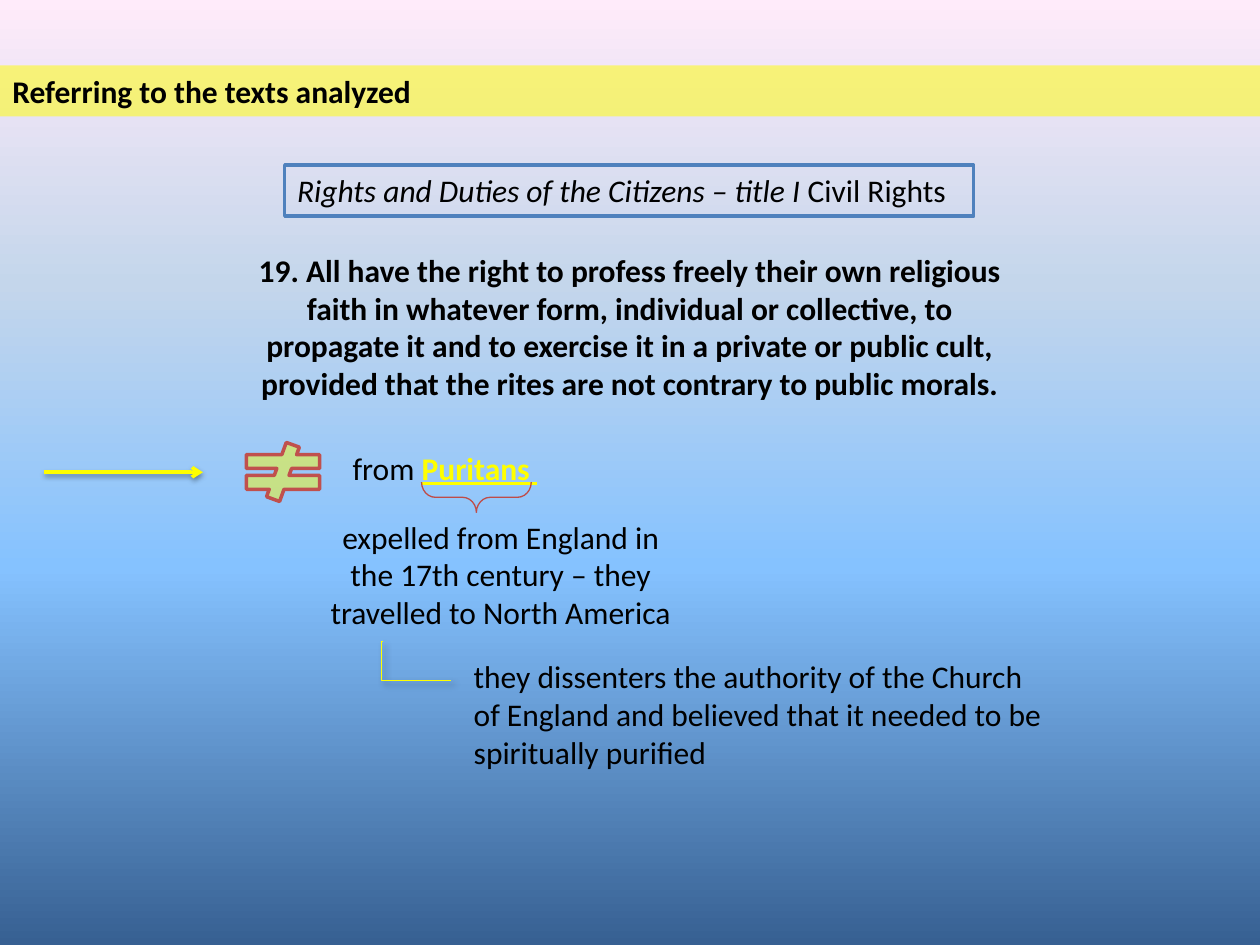
import pptx
import pptx.dml.color
import pptx.enum.shapes
import pptx.enum.text
import pptx.oxml
import pptx.oxml.ns
import pptx.util

Cm = pptx.util.Cm
Pt = pptx.util.Pt
RGBColor = pptx.dml.color.RGBColor
Shape = pptx.enum.shapes.MSO_SHAPE
Connector = pptx.enum.shapes.MSO_CONNECTOR
Align = pptx.enum.text.PP_ALIGN
qn = pptx.oxml.ns.qn

BLACK = RGBColor(0x00, 0x00, 0x00)
YELLOW = RGBColor(0xFF, 0xFF, 0x00)
BLUE = RGBColor(0x4F, 0x81, 0xBD)
RED = RGBColor(0xC0, 0x50, 0x4D)
BRACE_RED = RGBColor(0xBF, 0x4C, 0x48)
SKY = [
    (0, RGBColor(0x37, 0x60, 0x92)),
    (40, RGBColor(0x85, 0xC2, 0xFF)),
    (70, RGBColor(0xC4, 0xD6, 0xEB)),
    (100, RGBColor(0xFF, 0xEB, 0xFA)),
]
BODY = {"name": "Calibri", "size": Pt(18)}
NAMESPACE = pptx.oxml.ns.nsdecls("a")


def paint_background(page):
    """Fill the page with the vertical sky gradient."""
    fill = page.background.fill
    fill.gradient()
    gradient = page.background._cSld.find(".//" + qn("a:gradFill"))
    stops = "".join(
        f'<a:gs pos="{place * 1000}"><a:srgbClr val="{color}"/></a:gs>'
        for place, color in SKY
    )
    gradient.getparent().replace(gradient, pptx.oxml.parse_xml(
        f'<a:gradFill {NAMESPACE} rotWithShape="1"><a:gsLst>{stops}</a:gsLst>'
        '<a:lin ang="16200000" scaled="0"/></a:gradFill>'
    ))


def write(shape, spans, align=Align.LEFT, indent=0):
    """Put one paragraph of formatted spans into a shape."""
    frame = shape.text_frame
    frame.word_wrap = True
    frame.vertical_anchor = pptx.enum.text.MSO_ANCHOR.TOP
    para = frame.paragraphs[0]
    para.alignment = align
    if indent:
        para._p.get_or_add_pPr().set("marL", str(Cm(indent)))
    for text, formats in spans:
        span = para.add_run()
        span.text = text
        span.font.color.rgb = formats.get("color", BLACK)
        for key, value in {**BODY, **formats}.items():
            if key != "color":
                setattr(span.font, key, value)


def add_text(page, box, spans, align=Align.LEFT, indent=0):
    """Add a wrapped text box."""
    write(page.shapes.add_textbox(*map(Cm, box)), spans, align, indent)


def add_figure(page, kind, box, fill=None, alpha=100, line=None, width=2):
    """Add a preset shape with an optional translucent fill and outline."""
    shape = page.shapes.add_shape(kind, *map(Cm, box))
    shape.shadow.inherit = False
    if fill is None:
        shape.fill.background()
    else:
        shape.fill.solid()
        shape.fill.fore_color.rgb = fill
        color = shape._element.spPr.find(".//" + qn("a:srgbClr"))
        color.append(pptx.oxml.parse_xml(
            f'<a:alpha {NAMESPACE} val="{alpha * 1000}"/>'))
    if line is None:
        shape.line.fill.background()
    else:
        shape.line.color.rgb = line
        shape.line.width = Pt(width)
    return shape


def add_line(page, kind, ends, width, shadow):
    """Add a yellow connector with a soft shadow."""
    line = page.shapes.add_connector(kind, *map(Cm, ends))
    line.line.color.rgb = YELLOW
    line.line.width = Pt(width)
    blur, distance, angle, alpha = shadow
    line._element.spPr.append(pptx.oxml.parse_xml(
        f'<a:effectLst {NAMESPACE}><a:outerShdw blurRad="{Pt(blur)}" '
        f'dist="{Pt(distance)}" dir="{angle * 60000}" rotWithShape="0">'
        f'<a:srgbClr val="{BLACK}"><a:alpha val="{alpha * 1000}"/></a:srgbClr>'
        '</a:outerShdw></a:effectLst>'
    ))
    return line


def build_title_band(page, box):
    """Draw the translucent title band."""
    band = add_figure(page, Shape.RECTANGLE, box, YELLOW, 51)
    write(band, [("Referring to the texts analyzed", {"bold": True})])


def build_article(page, box):
    """Draw the framed source heading above the quoted article."""
    left, top, width, height = box
    heading = add_figure(
        page, Shape.RECTANGLE, (left + 1.14, top, 13.89, 1.03), line=BLUE)
    write(heading, [
        ("Rights and Duties of the Citizens – title I ", {"italic": True}),
        ("Civil Rights", {}),
    ])
    add_text(page, (left, top + 1.6, width, height - 1.6), [(
        "19. All have the right to profess freely their own religious faith "
        "in whatever form, individual or collective, to propagate it and to "
        "exercise it in a private or public cult, provided that the rites "
        "are not contrary to public morals.", {"bold": True},
    )], Align.CENTER)


def build_contrast(page, box):
    """Draw the arrow, the unequal sign and the Puritans with their brace."""
    left, top, width, height = box
    middle = top + 0.6
    arrow = add_line(page, Connector.STRAIGHT,
                     (left, middle, left + 3.2, middle), 2,
                     (3.1, 1.6, 90, 38))
    arrow.line._get_or_add_ln().append(
        pptx.oxml.parse_xml(f'<a:tailEnd {NAMESPACE} type="arrow"/>'))
    add_text(page, (left + 3.4, top, width - 3.4, height), [
        ("from ", {}),
        ("Puritans ", {"color": YELLOW, "bold": True, "underline": True}),
    ], indent=2.57)
    brace = add_figure(page, Shape.LEFT_BRACE, (left + 8.41, top, 0.61, 2.21),
                       line=BRACE_RED, width=0.75)
    brace.rotation = 270
    brace.adjustments[0] = 0.455
    add_figure(page, Shape.MATH_NOT_EQUAL, (left + 3.81, top, 2.01, 1.19),
               YELLOW, 46, RED)


def build_history(page, box):
    """Draw the two explanations joined by an elbow."""
    left, top, width, height = box
    add_text(page, (left, top, 7.59, 2.56), [(
        "expelled from England in the 17th century – they travelled to "
        "North America", {},
    )], Align.CENTER)
    add_text(page, (left + 3, top + height - 2.56, width - 3, 2.56), [(
        "they dissenters the authority of the Church of England and believed "
        "that it needed to be spiritually purified", {},
    )])
    elbow = add_line(page, Connector.ELBOW,
                     (left + 1.4, top + 2.62, left + 2.79, top + 3.41), 0.75,
                     (4, 3, 45, 40))
    guides = elbow._element.spPr.find(".//" + qn("a:avLst"))
    guides.append(pptx.oxml.parse_xml(
        f'<a:gd {NAMESPACE} name="adj1" fmla="val -300"/>'))


def main():
    """Build and save the deck."""
    deck = pptx.Presentation()
    deck.slide_width, deck.slide_height = Cm(25.4), Cm(19.05)
    page = deck.slides.add_slide(deck.slide_layouts[6])
    paint_background(page)
    build_title_band(page, (0, 1.32, 25.4, 1.03))
    build_article(page, (4.6, 3.33, 16.2, 4.93))
    build_contrast(page, (0.89, 8.92, 20.8, 1.8))
    build_history(page, (6.3, 10.31, 14.99, 5.38))
    deck.save("out.pptx")


if __name__ == "__main__":
    main()
